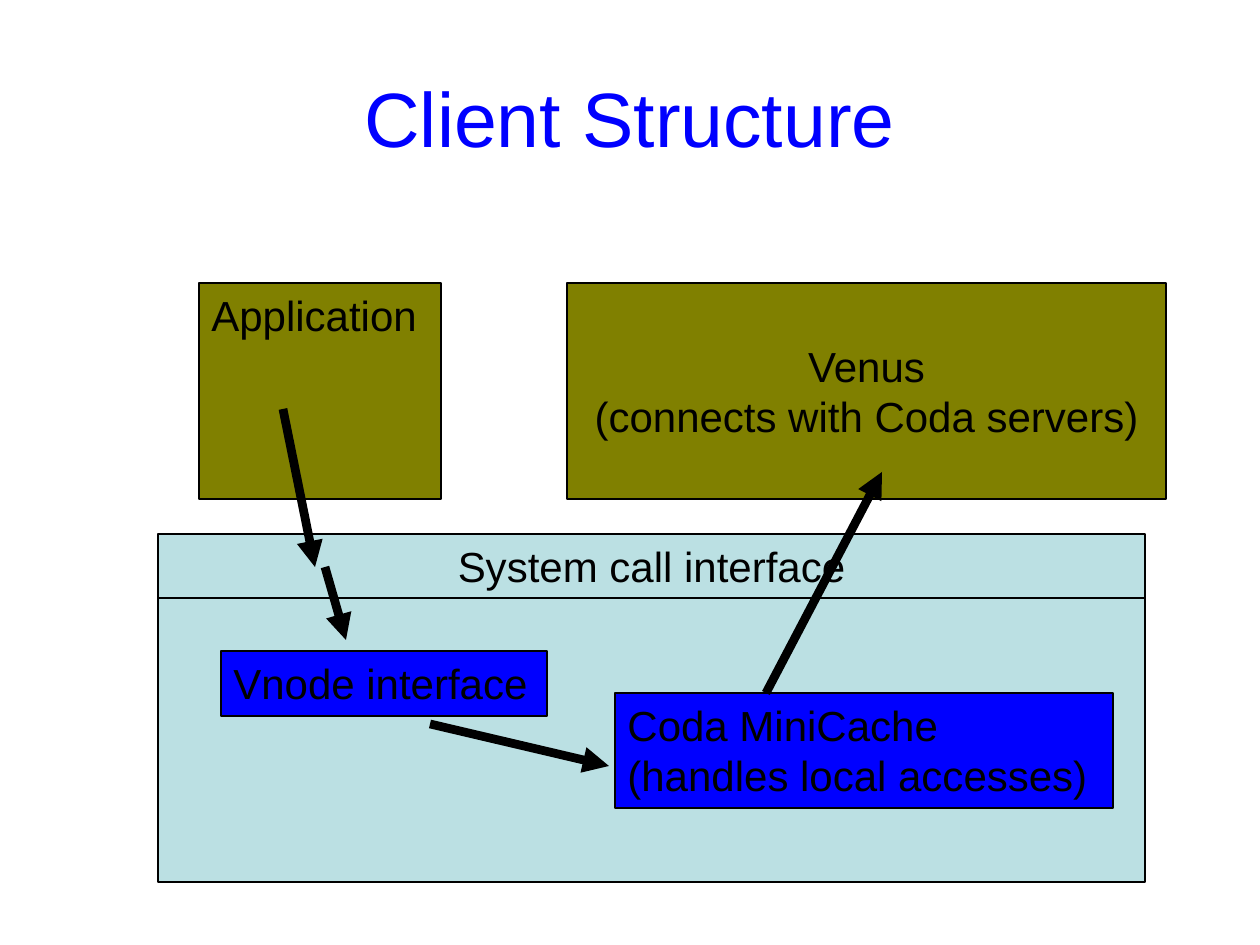
from lxml.etree import SubElement
from pptx import Presentation
from pptx.dml.color import RGBColor
from pptx.enum.shapes import MSO_CONNECTOR, MSO_SHAPE
from pptx.enum.text import MSO_ANCHOR, PP_ALIGN
from pptx.oxml.ns import qn
from pptx.util import Emu, Pt

PX = 914400 / 126
BLACK, BLUE, OLIVE, PALE = "000000", "0000FF", "808000", "BBE0E3"


def px(length):
    return Emu(round(length * PX))


def color(value):
    return RGBColor.from_string(value)


def write(shape, text, size=24, fill=BLACK, align=PP_ALIGN.LEFT, anchor=MSO_ANCHOR.TOP):
    """Each newline starts a paragraph; a vertical tab breaks the line."""
    frame = shape.text_frame
    frame.word_wrap = True
    frame.vertical_anchor = anchor
    frame.text = text
    for para in frame.paragraphs:
        para.alignment = align
        for span in para.runs:
            span.font.name = "Arial"
            span.font.size = Pt(size)
            span.font.color.rgb = color(fill)


def add_block(page, left, top, width, height, fill):
    block = page.shapes.add_shape(
        MSO_SHAPE.RECTANGLE, px(left), px(top), px(width), px(height))
    block.shadow.inherit = False
    block.fill.solid()
    block.fill.fore_color.rgb = color(fill)
    block.line.color.rgb = color(BLACK)
    block.line.width = Pt(1)
    return block


def add_arrow(page, start, end):
    arrow = page.shapes.add_connector(
        MSO_CONNECTOR.STRAIGHT, *(px(value) for value in (*start, *end)))
    arrow.line.color.rgb = color(BLACK)
    arrow.line.width = Pt(5)
    SubElement(arrow.line._get_or_add_ln(), qn("a:tailEnd"), type="triangle")
    SubElement(arrow._element.spPr, qn("a:effectLst"))


def add_title(page, left, top, width, height):
    box = page.shapes.add_textbox(px(left), px(top), px(width), px(height))
    write(box, "Client Structure", size=44, fill=BLUE,
          align=PP_ALIGN.CENTER, anchor=MSO_ANCHOR.MIDDLE)


def add_kernel(page, left, top, width, height):
    band_height = 64
    add_block(page, left, top + band_height, width, height - band_height, PALE)
    band = add_block(page, left, top, width, band_height, PALE)
    write(band, "System call interface", align=PP_ALIGN.CENTER)
    vnode = add_block(page, left + 63, top + 117, 326, 65, BLUE)
    write(vnode, "Vnode interface")
    cache = add_block(page, left + 457, top + 159, 498, 115, BLUE)
    write(cache, "Coda MiniCache\v(handles local accesses)")


def add_processes(page, left, top, width, height):
    application = add_block(page, left, top, 242, height, OLIVE)
    write(application, "Application")
    venus = add_block(page, left + 368, top, width - 368, height, OLIVE)
    write(venus, "Venus\n(connects with Coda servers)",
          align=PP_ALIGN.CENTER, anchor=MSO_ANCHOR.MIDDLE)


def add_call_flow(page, left, top):
    # Application to system call, vnode to cache, cache to Venus, call to vnode
    for start, end in (
        ((84, 126), (116, 284)),
        ((231, 441), (410, 483)),
        ((567, 410), (683, 189)),
        ((126, 284), (147, 357)),
    ):
        add_arrow(page, (left + start[0], top + start[1]),
                  (left + end[0], top + end[1]))


def main():
    deck = Presentation()
    deck.slide_width, deck.slide_height = px(1260), px(945)
    page = deck.slides.add_slide(deck.slide_layouts[6])
    add_title(page, 63, 38, 1134, 158)
    add_kernel(page, 158, 534, 987, 348)
    add_processes(page, 199, 283, 967, 216)
    add_call_flow(page, 199, 283)
    deck.save("out.pptx")


if __name__ == "__main__":
    main()
